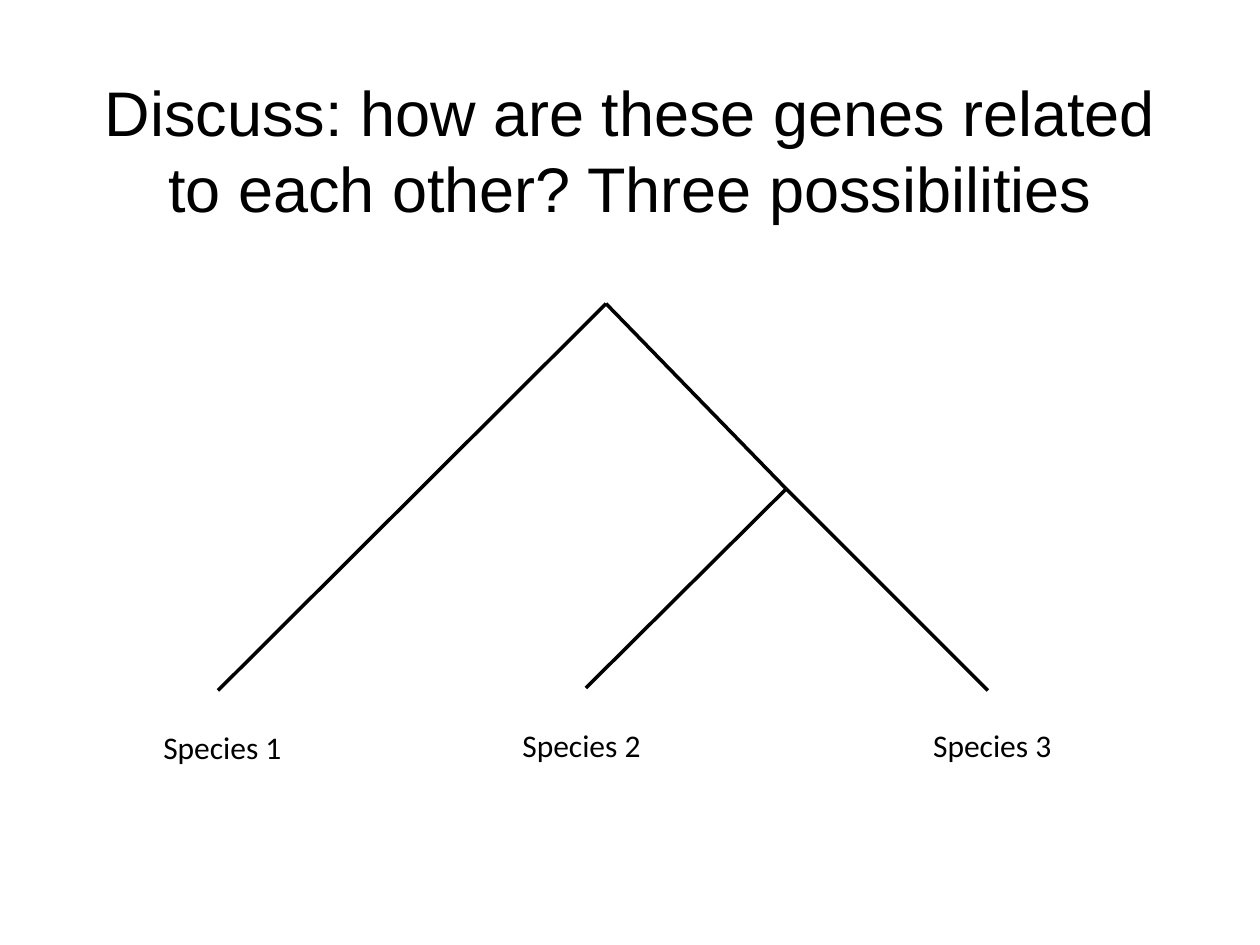
from dataclasses import dataclass

from lxml import etree
from pptx import Presentation
from pptx import util as u
from pptx.dml.color import RGBColor
from pptx.enum import shapes, text
from pptx.oxml import ns


@dataclass(frozen=True)
class Theme:
    ink: RGBColor = RGBColor(0, 0, 0)
    paper: RGBColor = RGBColor(255, 255, 255)
    title_font: str = "Arial"
    label_font: str = "Calibri"
    title_size: int = 36
    label_size: int = 18
    branch_width: int = 2


THEME = Theme()

ROOT = (4.81, 2.41)
FORK = (6.24, 3.88)
TIPS = [(1.73, 5.48), (4.65, 5.46), (7.84, 5.48)]
BRANCHES = [(ROOT, TIPS[0]), (FORK, TIPS[2]), (FORK, TIPS[1]), (FORK, ROOT)]
LABELS = [
    ("Species 1", 1.19, 5.73),
    ("Species 2", 4.04, 5.71),
    ("Species 3", 7.3, 5.71),
]


def write_centered(frame, wording, font_name, size):
    paragraph = frame.paragraphs[0]
    paragraph.alignment = text.PP_ALIGN.CENTER
    run = paragraph.add_run()
    run.text = wording
    run.font.name = font_name
    run.font.size = u.Pt(size)
    run.font.color.rgb = THEME.ink


def add_title(slide, wording):
    title = slide.shapes.title
    title.left, title.top = u.Inches(0.5), u.Inches(0.56)
    title.width, title.height = u.Inches(9), u.Inches(1.25)
    frame = title.text_frame
    frame.word_wrap = True
    frame.auto_size = text.MSO_AUTO_SIZE.NONE
    frame.vertical_anchor = text.MSO_ANCHOR.MIDDLE
    write_centered(frame, wording, THEME.title_font, THEME.title_size)


def add_branch(slide, start, end):
    points = [u.Inches(value) for value in (*start, *end)]
    branch = slide.shapes.add_connector(shapes.MSO_CONNECTOR.STRAIGHT, *points)
    branch.line.color.rgb = THEME.ink
    branch.line.width = u.Pt(THEME.branch_width)
    properties = branch._element.spPr
    etree.SubElement(properties, ns.qn("a:effectLst"))


def add_label(slide, wording, left, top):
    box = slide.shapes.add_textbox(
        u.Inches(left), u.Inches(top), u.Inches(1.15), u.Inches(0.4)
    )
    frame = box.text_frame
    frame.word_wrap = False
    frame.auto_size = text.MSO_AUTO_SIZE.SHAPE_TO_FIT_TEXT
    write_centered(frame, wording, THEME.label_font, THEME.label_size)


def main():
    presentation = Presentation()
    presentation.slide_width = u.Inches(10)
    presentation.slide_height = u.Inches(7.5)
    slide = presentation.slides.add_slide(presentation.slide_layouts[5])
    slide.background.fill.solid()
    slide.background.fill.fore_color.rgb = THEME.paper

    add_title(
        slide,
        "Discuss: how are these genes related to each other? Three possibilities",
    )
    for start, end in BRANCHES:
        add_branch(slide, start, end)
    for wording, left, top in LABELS:
        add_label(slide, wording, left, top)

    presentation.save("out.pptx")


if __name__ == "__main__":
    main()
